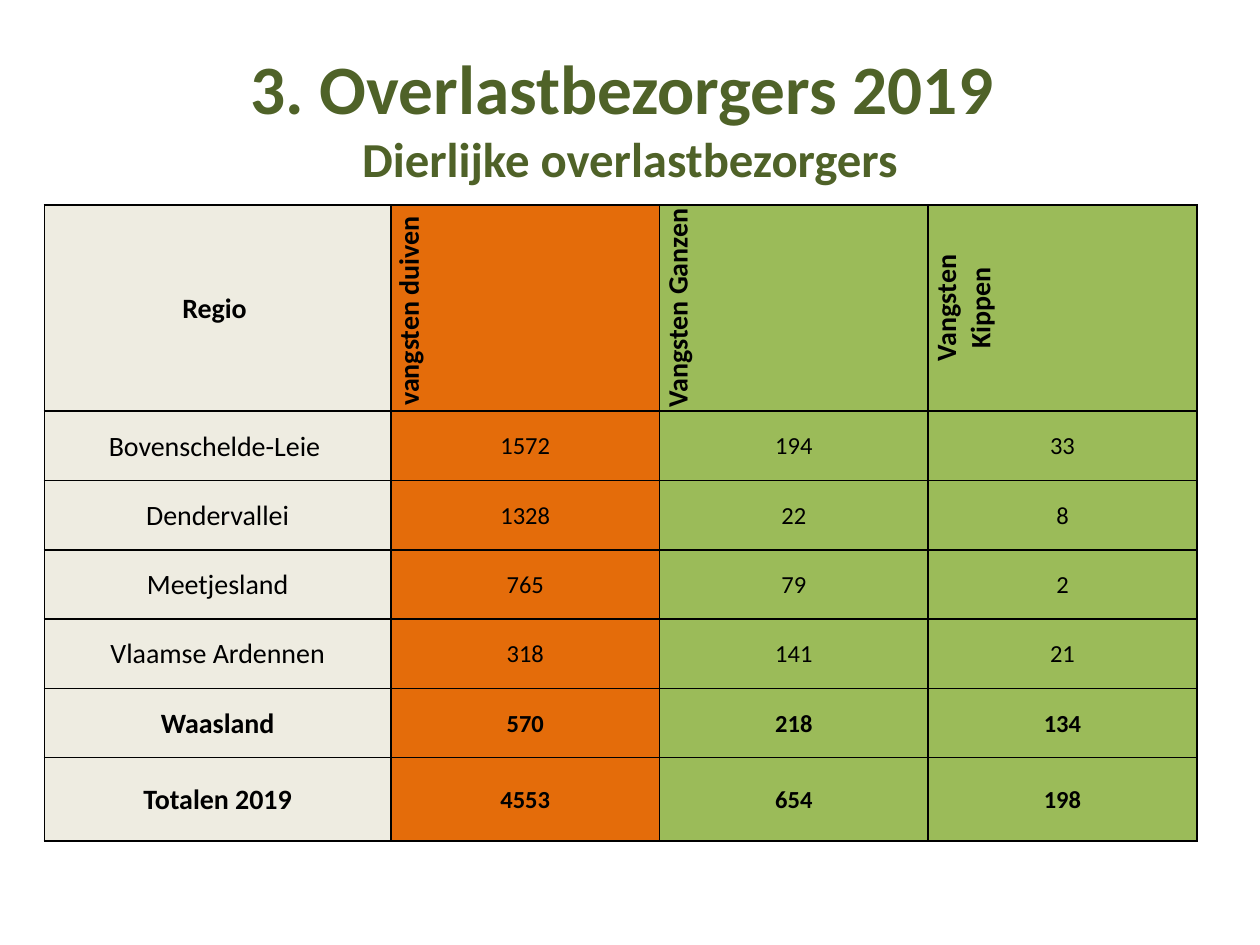
from lxml import etree
from pptx import Presentation
from pptx.dml.color import RGBColor
from pptx.enum import text
from pptx.oxml.ns import qn
from pptx.util import Pt

# Content
TITLE = [("3. Overlastbezorgers 2019 ", 39.6), ("Dierlijke overlastbezorgers", 27.9)]
HEADERS = ["Regio ", "vangsten duiven ", "Vangsten Ganzen ", "Vangsten\nKippen"]
CATCHES = [
    ("Bovenschelde-Leie ", 1572, 194, 33),
    ("Dendervallei", 1328, 22, 8),
    ("Meetjesland", 765, 79, 2),
    ("Vlaamse Ardennen", 318, 141, 21),
    ("Waasland", 570, 218, 134),
    ("Totalen 2019", 4553, 654, 198),
]
BOLD_REGIONS = {"Waasland", "Totalen 2019"}

# Look
FONT = "Calibri"
DARK_GREEN = RGBColor(0x4F, 0x62, 0x28)
BLACK = RGBColor(0, 0, 0)
CREAM = RGBColor(0xEE, 0xEC, 0xE1)
ORANGE = RGBColor(0xE4, 0x6C, 0x0A)
GREEN = RGBColor(0x9B, 0xBB, 0x59)
COLUMN_FILLS = [CREAM, ORANGE, GREEN, GREEN]
COLUMN_WIDTHS = [198, 153.5, 153.5, 153.5]
ROW_HEIGHTS = [100] + [39.6] * 5 + [47.5]


def add_run(paragraph, words, size, color, bold):
    paragraph.alignment = text.PP_ALIGN.CENTER
    run = paragraph.add_run()
    run.text = words
    run.font.name = FONT
    run.font.size = Pt(size)
    run.font.bold = bold
    run.font.color.rgb = color


def add_borders(cell):
    properties = cell._tc.get_or_add_tcPr()
    for side in ("lnL", "lnR", "lnT", "lnB"):
        line = etree.SubElement(properties, qn("a:" + side), w=str(Pt(1)))
        fill = etree.SubElement(line, qn("a:solidFill"))
        etree.SubElement(fill, qn("a:srgbClr"), val=str(BLACK))


def fill_cell(cell, words, size, bold, background, rotated):
    add_borders(cell)
    cell.fill.solid()
    cell.fill.fore_color.rgb = background
    cell.vertical_anchor = text.MSO_ANCHOR.MIDDLE
    cell.margin_left = cell.margin_right = cell.margin_top = Pt(0.75)
    cell.margin_bottom = 0
    if rotated:
        cell._tc.get_or_add_tcPr().set("vert", "vert270")
    frame = cell.text_frame
    for i, line in enumerate(words.split("\n")):
        paragraph = frame.add_paragraph() if i else frame.paragraphs[0]
        add_run(paragraph, line, size, BLACK, bold)


deck = Presentation()
deck.slide_width, deck.slide_height = Pt(720), Pt(540)
slide = deck.slides.add_slide(deck.slide_layouts[6])

# Title with subtitle on a second line
title = slide.shapes.add_textbox(Pt(36), Pt(21.6), Pt(648), Pt(90)).text_frame
title.word_wrap = True
title.vertical_anchor = text.MSO_ANCHOR.MIDDLE
heading = title.paragraphs[0]
for i, (words, size) in enumerate(TITLE):
    if i:
        heading.add_line_break()
    add_run(heading, words, size, DARK_GREEN, True)

# Table of catches per region
rows = [HEADERS] + CATCHES
table = slide.shapes.add_table(
    len(rows), len(HEADERS), Pt(25.4), Pt(117),
    Pt(sum(COLUMN_WIDTHS)), Pt(sum(ROW_HEIGHTS))).table
table.first_row = table.horz_banding = False
for column, width in zip(table.columns, COLUMN_WIDTHS):
    column.width = Pt(width)
for r, (values, height) in enumerate(zip(rows, ROW_HEIGHTS)):
    table.rows[r].height = Pt(height)
    is_header = r == 0
    bold = is_header or values[0] in BOLD_REGIONS
    for c, value in enumerate(values):
        size = 16 if is_header or c == 0 else 14
        fill_cell(table.cell(r, c), str(value), size, bold,
                  COLUMN_FILLS[c], is_header and c > 0)

deck.save("out.pptx")
